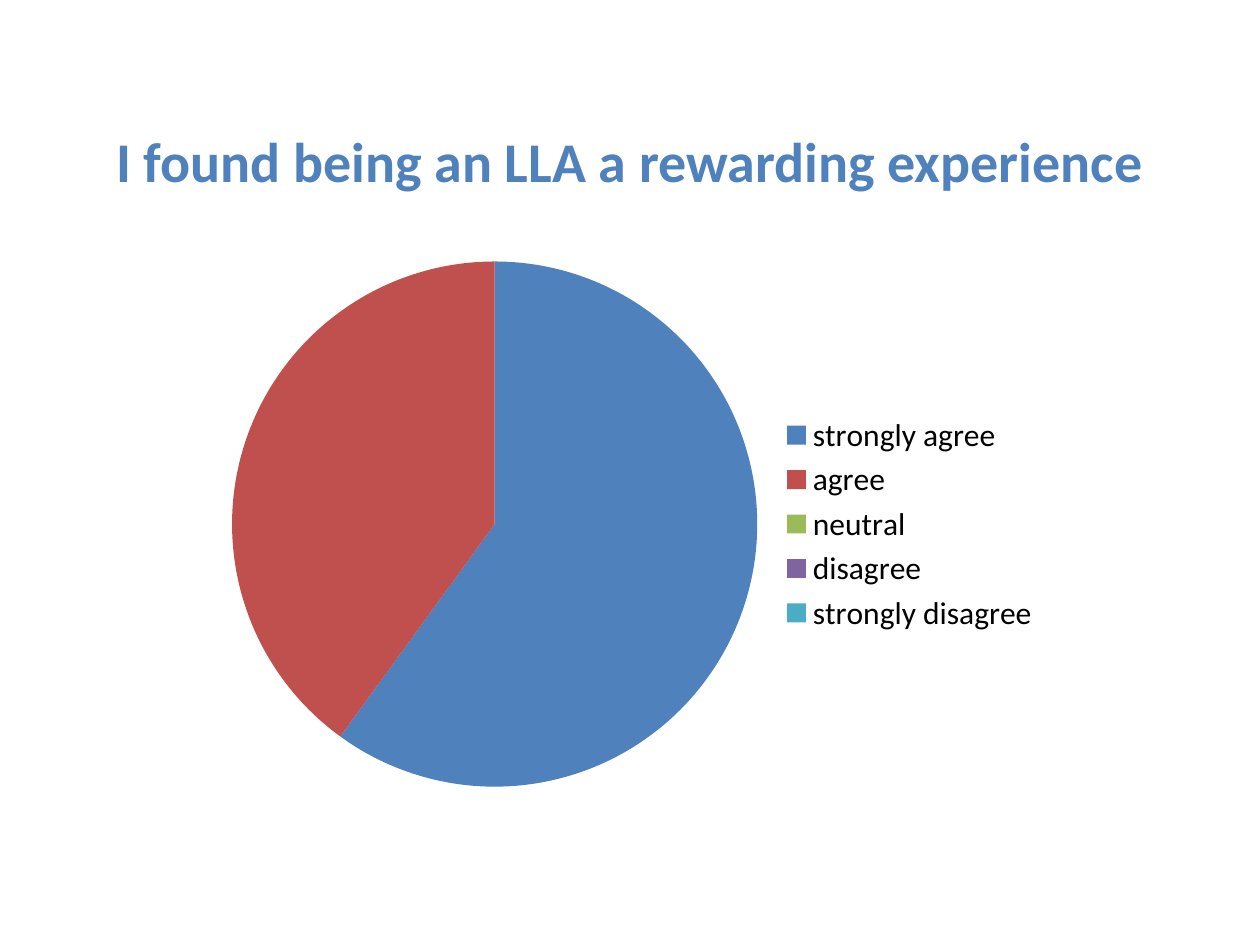
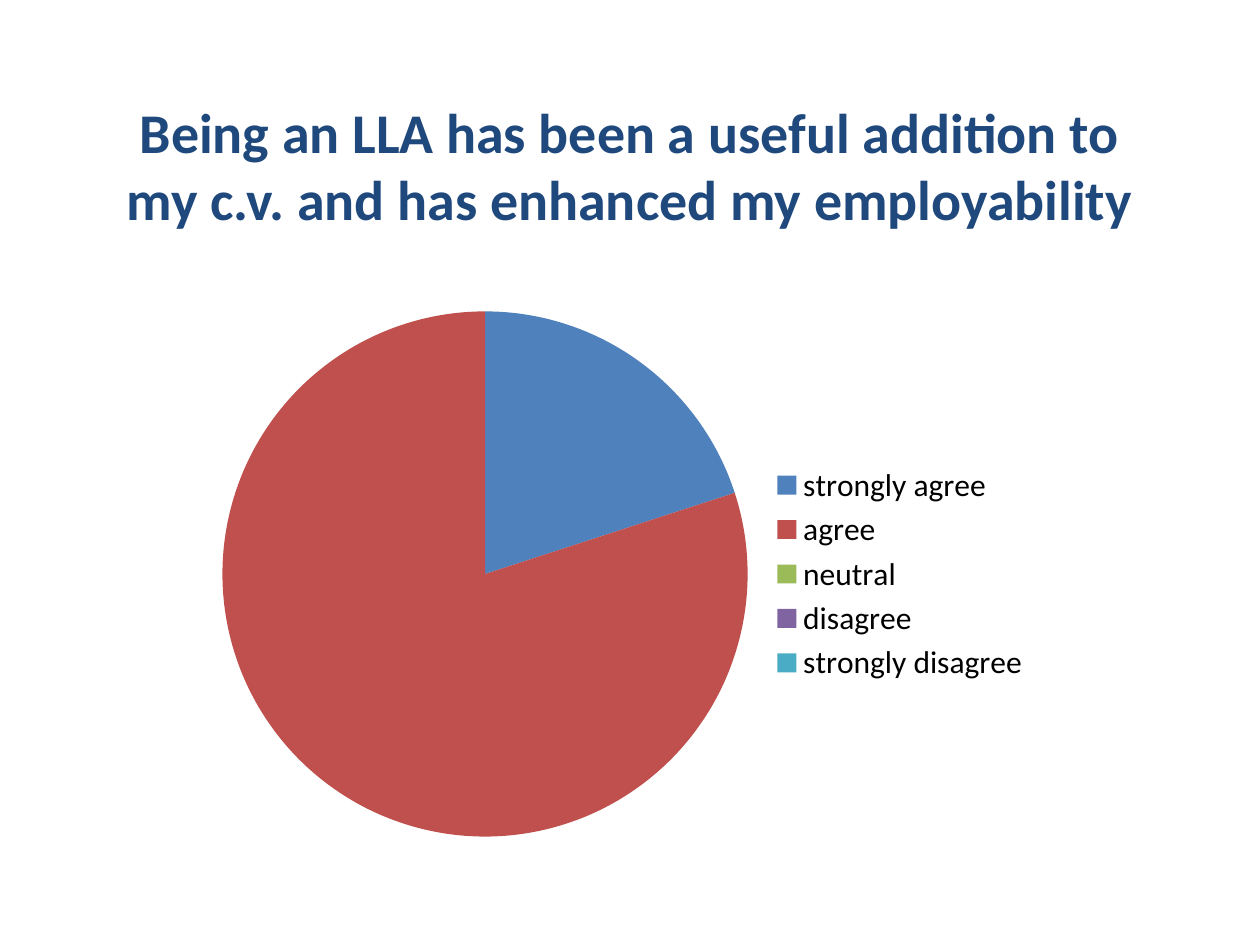
from pptx import Presentation
from pptx.chart.data import CategoryChartData as ChartData
from pptx.dml.color import RGBColor
from pptx.enum.chart import XL_CHART_TYPE as ChartType, XL_LEGEND_POSITION as LegendPosition
from pptx.enum.text import MSO_ANCHOR as Anchor, PP_ALIGN as Align
from pptx.util import Pt

FONT = "Calibri"
BLACK = "000000"
BLUE, NAVY = "4F81BD", "1F497D"
# Each answer and its slice colour
ANSWERS = {
    "strongly agree": BLUE,
    "agree": "C0504D",
    "neutral": "9BBB59",
    "disagree": "8064A2",
    "strongly disagree": "4BACC6",
}
CHART_SIZE = (480, 320)

# Boxes are left, top, width, height in points
QUESTIONS = [
    {
        "title": "I found being an LLA a rewarding experience",
        "title_color": BLUE,
        "title_box": (54, 49, 612, 85),
        "chart_box": (121.5, 139.5, *CHART_SIZE),
        "values": (60, 40, 0, 0, 0),
    },
    {
        "title": "Being an LLA has been a useful addition to my c.v. "
                 "and has enhanced my employability",
        "title_color": NAVY,
        "title_box": (54, 43, 612, 102),
        "chart_box": (116, 168, *CHART_SIZE),
        "values": (20, 80, 0, 0, 0),
    },
]


def color(hex_string):
    return RGBColor.from_string(hex_string)


def set_font(font, hex_string, **formats):
    for name, value in {"name": FONT, **formats}.items():
        setattr(font, name, value)
    font.color.rgb = color(hex_string)


def add_title(slide, text, hex_string, box):
    frame = slide.shapes.add_textbox(*map(Pt, box)).text_frame
    frame.word_wrap = True
    frame.vertical_anchor = Anchor.MIDDLE
    paragraph = frame.paragraphs[0]
    paragraph.alignment = Align.CENTER
    run = paragraph.add_run()
    run.text = text
    set_font(run.font, hex_string, size=Pt(32), bold=True)


def add_answer_pie(slide, values, box):
    data = ChartData()
    data.categories = list(ANSWERS)
    data.add_series("Series 1", values)
    chart = slide.shapes.add_chart(ChartType.PIE, *map(Pt, box), data).chart
    chart.has_title = False
    set_font(chart.font, BLACK, size=Pt(18))

    # Legend beside the pie
    chart.has_legend = True
    chart.legend.position = LegendPosition.RIGHT
    chart.legend.include_in_layout = False

    # Slice colours
    plot = chart.plots[0]
    plot.vary_by_categories = True
    for index, hex_string in enumerate(ANSWERS.values()):
        fill = plot.series[0].points[index].format.fill
        fill.solid()
        fill.fore_color.rgb = color(hex_string)


def add_question_slide(presentation, question):
    slide = presentation.slides.add_slide(presentation.slide_layouts[6])
    add_title(slide, question["title"], question["title_color"], question["title_box"])
    add_answer_pie(slide, question["values"], question["chart_box"])


def main():
    presentation = Presentation()
    presentation.slide_width, presentation.slide_height = Pt(720), Pt(540)
    for question in QUESTIONS:
        add_question_slide(presentation, question)
    presentation.save("out.pptx")


if __name__ == "__main__":
    main()
